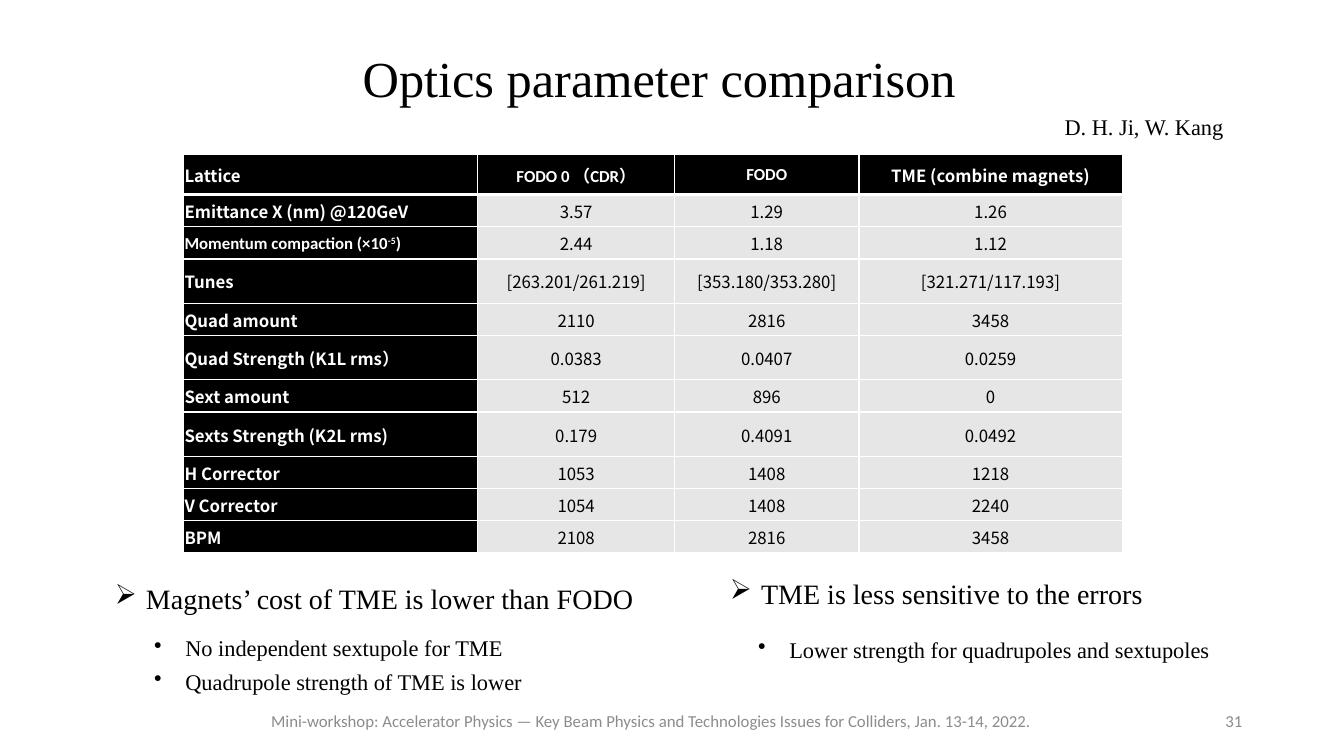
from dataclasses import dataclass

from lxml import etree
from pptx import Presentation
from pptx.dml.color import RGBColor
from pptx.enum.text import MSO_ANCHOR, MSO_AUTO_SIZE, PP_ALIGN
from pptx.oxml.ns import qn
from pptx.util import Inches, Pt

LEFT, CENTER, RIGHT = PP_ALIGN.LEFT, PP_ALIGN.CENTER, PP_ALIGN.RIGHT
TOP, MIDDLE = MSO_ANCHOR.TOP, MSO_ANCHOR.MIDDLE
FIT_SHAPE = MSO_AUTO_SIZE.SHAPE_TO_FIT_TEXT


@dataclass(frozen=True)
class Theme:
    serif: str = "Times New Roman"
    sans: str = "Calibri"
    table_font: str = "Noto Sans CJK SC"
    black: str = "000000"
    white: str = "FFFFFF"
    cell_gray: str = "E7E6E6"
    footer_gray: str = "8C8C8C"
    title: int = 36
    heading: int = 20
    body: int = 16
    small: int = 12


THEME = Theme()

HEADER = ["Lattice", "FODO 0 （CDR）", "FODO", "TME (combine magnets)"]
PARAMETERS = [
    ["Emittance X (nm) @120GeV", "3.57", "1.29", "1.26"],
    [("Momentum compaction (×10", "-5", ")"), "2.44", "1.18", "1.12"],
    ["Tunes", "[263.201/261.219]", "[353.180/353.280]", "[321.271/117.193]"],
    ["Quad amount", "2110", "2816", "3458"],
    ["Quad Strength (K1L rms）", "0.0383", "0.0407", "0.0259"],
    ["Sext amount", "512", "896", "0"],
    ["Sexts Strength (K2L rms)", "0.179", "0.4091", "0.0492"],
    ["H Corrector", "1053", "1408", "1218"],
    ["V Corrector", "1054", "1408", "2240"],
    ["BPM", "2108", "2816", "3458"],
]
COLUMN_WIDTHS = [2.92, 1.95, 1.83, 2.61]
HEADER_HEIGHT, ROW_HEIGHT, TALL_ROW_HEIGHT = 0.4, 0.32, 0.44
TALL_ROWS = {3, 5, 7}
CALIBRI_CELLS = {(0, 1), (0, 2), (2, 0)}


def style_font(font, name, size, color, bold=False):
    font.name = name
    font.size = Pt(size)
    font.bold = bold
    font.color.rgb = RGBColor.from_string(color)


def add_bullet(paragraph, character):
    properties = paragraph._p.get_or_add_pPr()
    properties.set("marL", str(Inches(0.31)))
    properties.set("indent", str(-Inches(0.31)))
    etree.SubElement(properties, qn("a:buChar")).set("char", character)


def add_text(slide, box, lines, size, font=THEME.serif, color=THEME.black,
             align=LEFT, anchor=TOP, bullet=None, line_spacing=None):
    shape = slide.shapes.add_textbox(*(Inches(length) for length in box))
    frame = shape.text_frame
    frame.word_wrap = True
    frame.vertical_anchor = anchor
    if anchor == TOP:
        frame.auto_size = FIT_SHAPE
    frame.text = "\n".join(lines)
    for paragraph in frame.paragraphs:
        if bullet:
            add_bullet(paragraph, bullet)
        if line_spacing:
            paragraph.line_spacing = Pt(line_spacing)
        paragraph.alignment = align
        style_font(paragraph.font, font, size, color)


def set_borders(cell, row):
    """White rules, with a heavier one between the header and the first row."""
    properties = cell._tc.get_or_add_tcPr()
    heavy_side = {0: "lnB", 1: "lnT"}.get(row)
    for side in ("lnL", "lnR", "lnT", "lnB"):
        width = 3 if side == heavy_side else 1
        line = etree.SubElement(properties, qn(f"a:{side}"), w=str(Pt(width)))
        fill = etree.SubElement(line, qn("a:solidFill"))
        etree.SubElement(fill, qn("a:srgbClr"), val=THEME.white)


def fill_cell(cell, content, row, column):
    is_label = row == 0 or column == 0
    cell.vertical_anchor = MIDDLE
    cell.margin_left = cell.margin_right = cell.margin_top = Inches(0.01)
    cell.margin_bottom = 0
    set_borders(cell, row)
    cell.fill.solid()
    cell.fill.fore_color.rgb = RGBColor.from_string(
        THEME.black if is_label else THEME.cell_gray)

    paragraph = cell.text_frame.paragraphs[0]
    paragraph.alignment = CENTER if column else LEFT
    style_font(paragraph.font,
               THEME.sans if (row, column) in CALIBRI_CELLS else THEME.table_font,
               THEME.small, THEME.white if is_label else THEME.black, is_label)
    parts = content if isinstance(content, tuple) else (content,)
    for index, part in enumerate(parts):
        run = paragraph.add_run()
        run.text = part
        if index == 1:
            run._r.get_or_add_rPr().set("baseline", "30000")


def add_parameter_table(slide, left, top):
    rows = [HEADER, *PARAMETERS]
    heights = [HEADER_HEIGHT] + [
        TALL_ROW_HEIGHT if row in TALL_ROWS else ROW_HEIGHT
        for row in range(1, len(rows))]
    table = slide.shapes.add_table(
        len(rows), len(HEADER), Inches(left), Inches(top),
        Inches(sum(COLUMN_WIDTHS)), Inches(sum(heights))).table
    table.horz_banding = False
    table.first_col = True
    for column, width in zip(table.columns, COLUMN_WIDTHS):
        column.width = Inches(width)
    for row, (contents, height) in enumerate(zip(rows, heights)):
        table.rows[row].height = Inches(height)
        for column, content in enumerate(contents):
            fill_cell(table.cell(row, column), content, row, column)


def add_footer(slide, box, text, align):
    add_text(slide, box, [text], THEME.small, THEME.sans, THEME.footer_gray,
             align, MIDDLE)


def main():
    presentation = Presentation()
    presentation.slide_width = Inches(13.33)
    presentation.slide_height = Inches(7.5)
    slide = presentation.slides.add_slide(presentation.slide_layouts[6])

    add_text(slide, (2.57, 0.42, 7.94, 0.71), ["Optics parameter comparison"],
             THEME.title, align=CENTER)
    add_text(slide, (10.46, 1.07, 2.08, 0.37), ["D. H. Ji, W. Kang"], THEME.body)
    add_parameter_table(slide, 1.82, 1.53)

    add_text(slide, (1.04, 5.72, 6.6, 0.44),
             ["Magnets’ cost of TME is lower than FODO"], THEME.heading, bullet="➢")
    add_text(slide, (1.43, 6.18, 5.69, 0.74),
             ["No independent sextupole for TME",
              "Quadrupole strength of TME is lower"],
             THEME.body, bullet="•", line_spacing=24)
    add_text(slide, (7.14, 5.67, 5.21, 0.44),
             ["TME is less sensitive to the errors"], THEME.heading, bullet="➢")
    add_text(slide, (7.42, 6.26, 5.22, 0.37),
             ["Lower strength for quadrupoles and sextupoles"],
             THEME.body, bullet="•")

    add_footer(slide, (2.49, 6.95, 7.94, 0.4),
               "Mini-workshop: Accelerator Physics — Key Beam Physics and "
               "Technologies Issues for Colliders, Jan. 13-14, 2022.", CENTER)
    add_footer(slide, (9.42, 6.95, 3, 0.4), "31", RIGHT)
    presentation.save("out.pptx")


if __name__ == "__main__":
    main()
